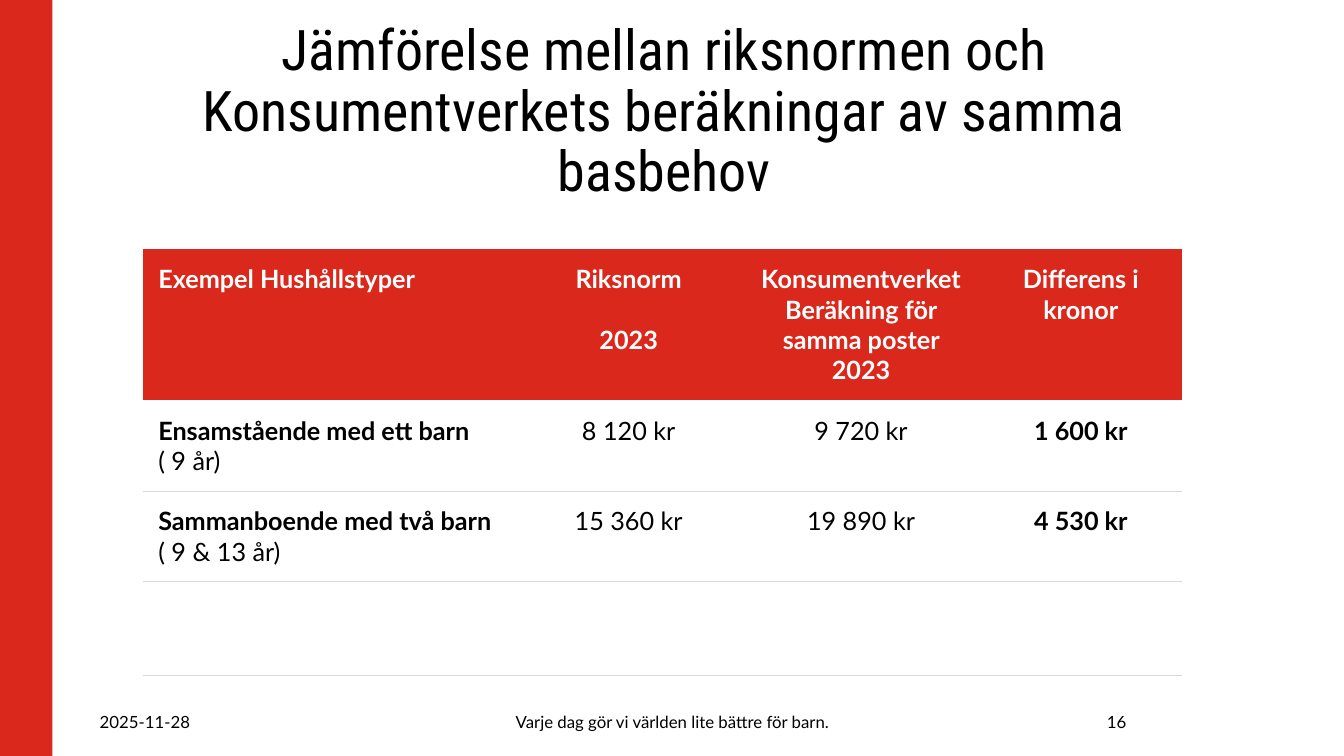
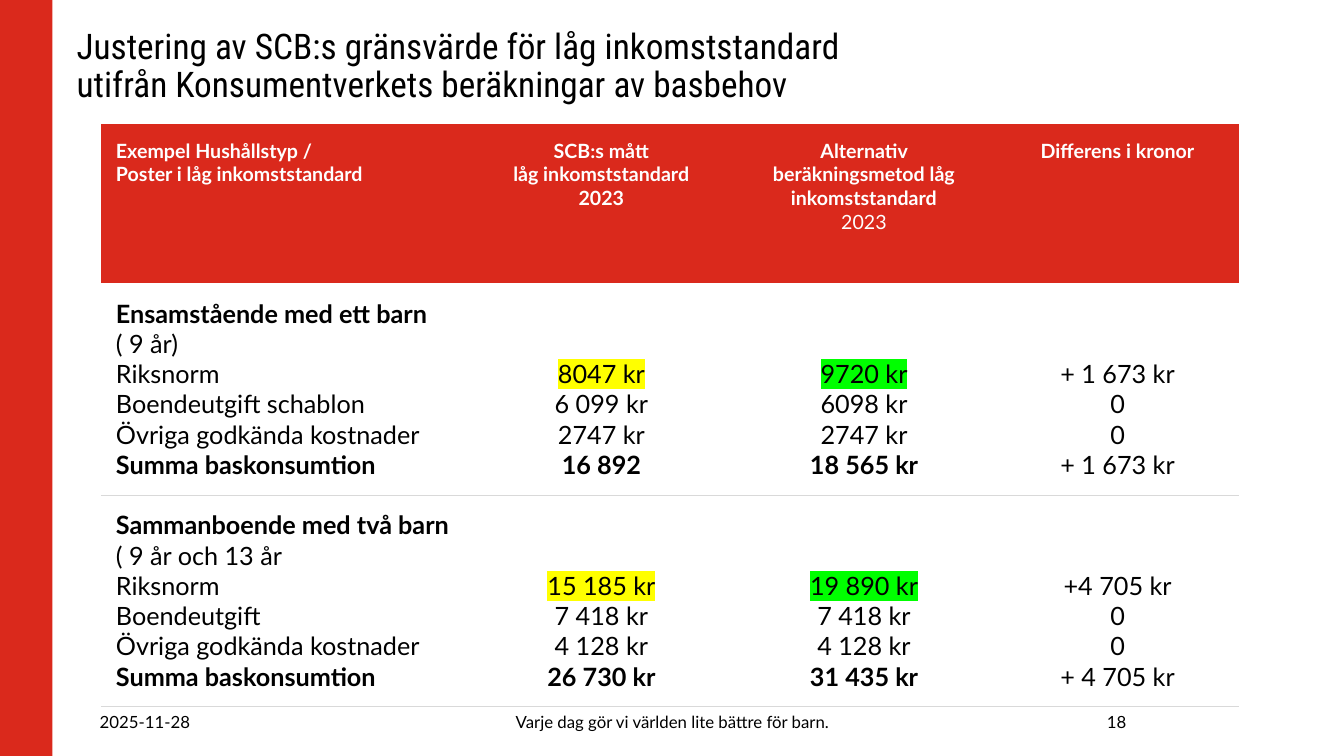
import dataclasses

import lxml.etree
import pptx
import pptx.dml.color
import pptx.enum.shapes
import pptx.enum.text
import pptx.oxml
import pptx.oxml.ns
import pptx.util

PX = 9144  # 100 px to the inch
WIDTH, HEIGHT = 1333, 750
RED, BLACK, WHITE, GREY = "DA291C", "000000", "FFFFFF", "D9D9D9"
YELLOW, GREEN = "FFFF00", "00FF00"
TITLE_FONT, BODY_FONT = "Roboto Condensed", "Lato"
PLAIN_TABLE = "{2D5ABB26-0587-4C30-8999-92F81FD0307C}"
CELL_INSET = 15
BODY_SIZE = 18
BODY_LINE = 30  # height of one text line in px
DATE = "2025-11-28"
SLOGAN = "Varje dag gör vi världen lite bättre för barn."
LEFT, CENTER, RIGHT = (pptx.enum.text.PP_ALIGN.LEFT, pptx.enum.text.PP_ALIGN.CENTER,
                       pptx.enum.text.PP_ALIGN.RIGHT)


@dataclasses.dataclass
class Line:
    text: str
    bold: bool = False
    highlight: str = ""
    gap: int = 0


@dataclasses.dataclass
class Cell:
    lines: list
    skip: int = 0  # text lines left free at the top


def rgb(value):
    return pptx.dml.color.RGBColor.from_string(value)


def emu(*lengths):
    return [pptx.util.Emu(n * PX) for n in lengths]


def style(p, font, size, color=BLACK, bold=False, align=LEFT):
    p.alignment = align
    p.font.name = font
    p.font.size = pptx.util.Pt(size)
    p.font.bold = bold
    p.font.color.rgb = rgb(color)


def sub(parent, tag, **attributes):
    return lxml.etree.SubElement(parent, pptx.oxml.ns.qn(tag), **attributes)


# Title, side band and footer
def add_title(slide, text, box, size, align):
    sp = slide.shapes.title
    sp.left, sp.top, sp.width, sp.height = emu(*box)
    tf = sp.text_frame
    tf.text = text
    tf.word_wrap = True
    tf.auto_size = pptx.enum.text.MSO_AUTO_SIZE.NONE
    tf.vertical_anchor = pptx.enum.text.MSO_ANCHOR.MIDDLE
    p = tf.paragraphs[0]
    style(p, TITLE_FONT, size, align=align)
    p.line_spacing = 0.9


def add_band(slide, box):
    sp = slide.shapes.add_shape(pptx.enum.shapes.MSO_SHAPE.RECTANGLE, *emu(*box))
    sp.shadow.inherit = False
    sp.fill.solid()
    sp.fill.fore_color.rgb = rgb(RED)
    sp.line.fill.background()


def add_footer(slide, number, left=89, top=706, height=20):
    parts = ((DATE, 188, LEFT), (SLOGAN, 780, CENTER), (number, 70, RIGHT))
    for text, width, align in parts:
        tf = slide.shapes.add_textbox(*emu(left, top, width, height)).text_frame
        tf.word_wrap = True
        tf.margin_top = tf.margin_bottom = 0
        tf.vertical_anchor = pptx.enum.text.MSO_ANCHOR.MIDDLE
        tf.text = text
        style(tf.paragraphs[0], BODY_FONT, 12, align=align)
        left += width


def add_frame(prs, title, box, size, align, number):
    slide = prs.slides.add_slide(prs.slide_layouts[5])
    add_band(slide, (0, 0, 52, HEIGHT))
    add_title(slide, title, box, size, align)
    add_footer(slide, number)
    return slide


# Table
def rule_below(cell):
    tc_pr = cell._tc.get_or_add_tcPr()
    ln = sub(tc_pr, "a:lnB", w=str(pptx.util.Pt(0.5)))
    sub(sub(ln, "a:solidFill"), "a:srgbClr", val=GREY)


def fill_cell(cell, content, size, color, fill, align):
    cell.margin_left, cell.margin_right, cell.margin_bottom = emu(*[CELL_INSET] * 3)
    cell.margin_top = emu(CELL_INSET + content.skip * BODY_LINE)[0]
    cell.fill.solid()
    cell.fill.fore_color.rgb = rgb(fill)
    tf = cell.text_frame
    for i, line in enumerate(content.lines):
        p = tf.add_paragraph() if i else tf.paragraphs[0]
        style(p, BODY_FONT, size, color, line.bold, align)
        if line.gap:
            p.space_before = emu(line.gap)[0]
        r = p.add_run()
        r.text = line.text
        if line.highlight:
            mark = sub(r._r.get_or_add_rPr(), "a:highlight")
            sub(mark, "a:srgbClr", val=line.highlight)


def add_table(slide, left, top, widths, heights, rows, header_size):
    frame = slide.shapes.add_table(
        len(heights), len(widths), *emu(left, top, sum(widths), sum(heights)))
    table = frame.table
    table.horz_banding = False
    table._tbl.tblPr.find(pptx.oxml.ns.qn("a:tableStyleId")).text = PLAIN_TABLE
    for column, width in zip(table.columns, emu(*widths)):
        column.width = width
    for row, height in zip(table.rows, emu(*heights)):
        row.height = height
    for i, row in enumerate(rows):
        size, color, fill = (BODY_SIZE, BLACK, WHITE) if i else (header_size, WHITE, RED)
        for j, content in enumerate(row):
            cell = table.cell(i, j)
            if i:
                rule_below(cell)
            fill_cell(cell, content, size, color, fill, CENTER if j else LEFT)


def bold_cell(*texts):
    return Cell([Line(text, bold=True) for text in texts])


def household_row(name, age, norm, alternative, difference):
    return [Cell([Line(name, bold=True), Line(age)]), Cell([Line(norm)]),
            Cell([Line(alternative)]), bold_cell(difference)]


def budget_row(name, age, labels, scb, alternative, difference):
    def figures(values, highlight=""):
        last = len(values) - 1
        return [Line(v, bold=i == last, highlight="" if i else highlight)
                for i, v in enumerate(values)]

    return [Cell([Line(name, bold=True), Line(age)] + figures(labels)),
            Cell(figures(scb, YELLOW), skip=2),
            Cell(figures(alternative, GREEN), skip=2),
            Cell([Line(v) for v in difference], skip=2)]


# Slides
def comparison_slide(prs):
    slide = add_frame(
        prs, "Jämförelse mellan riksnormen och Konsumentverkets beräkningar av samma basbehov",
        (85, 24, 1147, 176), 40, CENTER, "16")
    rows = [
        [bold_cell("Exempel Hushållstyper"),
         Cell([Line("Riksnorm", bold=True), Line("2023", bold=True, gap=BODY_LINE)]),
         bold_cell("Konsumentverket Beräkning för samma poster 2023"),
         bold_cell("Differens i kronor")],
        household_row("Ensamstående med ett barn", "( 9 år)",
                      "8 120 kr", "9 720 kr", "1 600 kr"),
        household_row("Sammanboende med två barn", "( 9 & 13 år)",
                      "15 360 kr", "19 890 kr", "4 530 kr"),
        [Cell([])] * 4,
    ]
    add_table(slide, 142, 247, (369, 225, 236, 200), (150, 90, 90, 93), rows, 18)


def adjustment_slide(prs):
    slide = add_frame(
        prs, "Justering av SCB:s gränsvärde för låg inkomststandard\v"
        "utifrån Konsumentverkets beräkningar av basbehov",
        (66, 24, 1185, 85), 25.2, LEFT, "18")
    rows = [
        [bold_cell("Exempel Hushållstyp /", "Poster i låg inkomststandard"),
         bold_cell("SCB:s mått", "låg inkomststandard", "2023"),
         Cell([Line("Alternativ beräkningsmetod låg inkomststandard", bold=True),
               Line("2023")]),
         bold_cell("Differens i kronor")],
        budget_row("Ensamstående med ett barn", "( 9 år)",
                   ("Riksnorm", "Boendeutgift schablon", "Övriga godkända kostnader",
                    "Summa baskonsumtion"),
                   ("8047 kr", "6 099 kr", "2747 kr", "16 892"),
                   ("9720 kr", "6098 kr", "2747 kr", "18 565 kr"),
                   ("+ 1 673 kr", "0", "0", "+ 1 673 kr")),
        budget_row("Sammanboende med två barn", "( 9 år och 13 år",
                   ("Riksnorm", "Boendeutgift", "Övriga godkända kostnader",
                    "Summa baskonsumtion"),
                   ("15 185 kr", "7 418 kr", "4 128 kr", "26 730 kr"),
                   ("19 890 kr", "7 418 kr", "4 128 kr", "31 435 kr"),
                   ("+4 705 kr", "0", "0", "+ 4 705 kr")),
    ]
    add_table(slide, 100, 123, (367, 259, 262, 241), (158, 210, 210), rows, 14)


def main():
    prs = pptx.Presentation()
    prs.slide_width, prs.slide_height = emu(WIDTH, HEIGHT)
    comparison_slide(prs)
    adjustment_slide(prs)
    prs.save("out.pptx")


if __name__ == "__main__":
    main()
